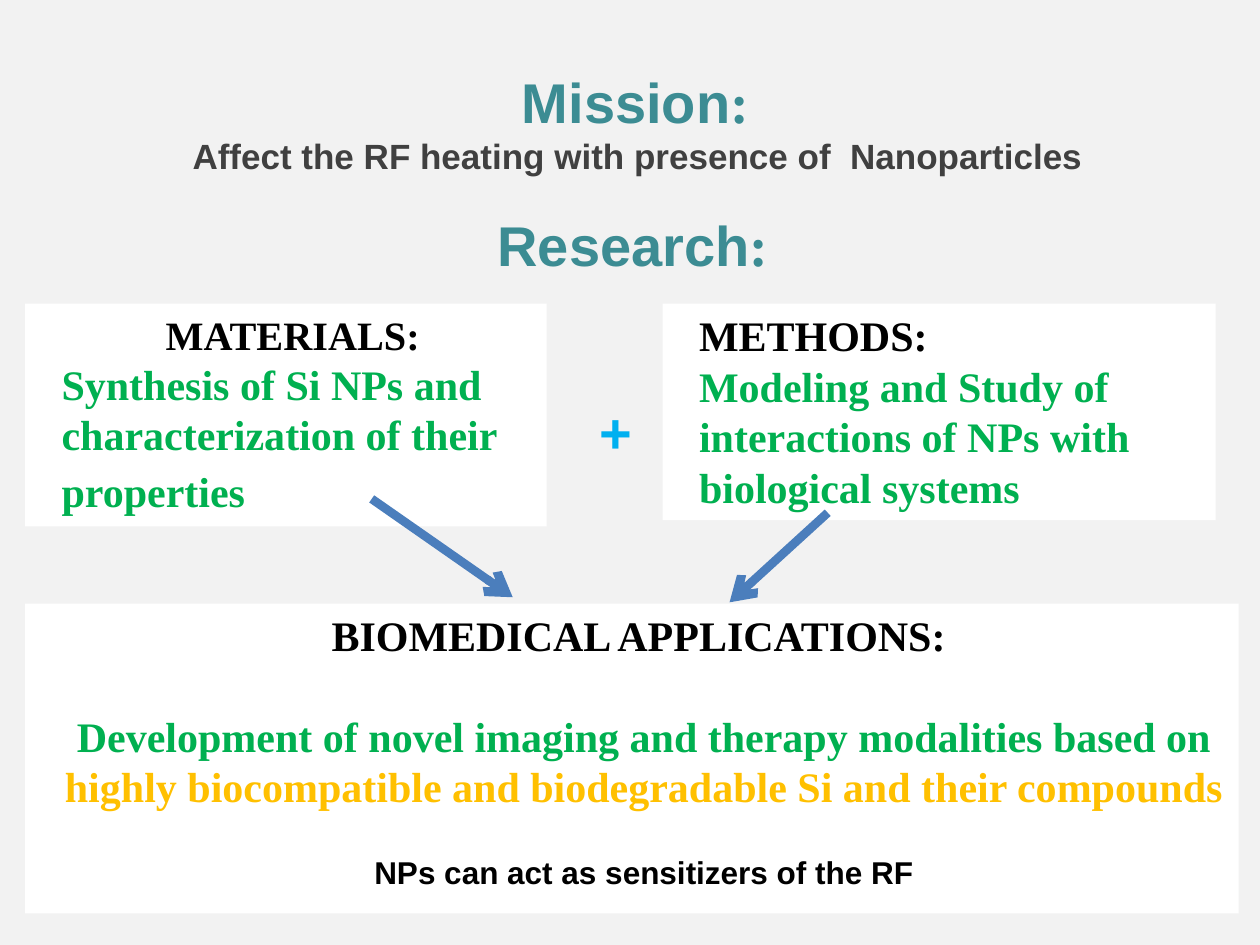
from dataclasses import dataclass

from lxml import etree
from pptx import Presentation
from pptx.dml.color import RGBColor
from pptx.enum.shapes import MSO_CONNECTOR, MSO_SHAPE
from pptx.enum.text import MSO_ANCHOR, PP_ALIGN
from pptx.oxml.ns import qn
from pptx.util import Pt

STRAIGHT = MSO_CONNECTOR.STRAIGHT
RECTANGLE = MSO_SHAPE.RECTANGLE
TOP, MIDDLE = MSO_ANCHOR.TOP, MSO_ANCHOR.MIDDLE
LEFT, CENTER = PP_ALIGN.LEFT, PP_ALIGN.CENTER


@dataclass(frozen=True)
class Theme:
    sans: str = "Arial"
    serif: str = "Times New Roman"
    background: str = "F2F2F2"
    panel: str = "FFFFFF"
    heading: str = "3C8C93"
    subtitle: str = "404040"
    ink: str = "000000"
    green: str = "00B050"
    gold: str = "FFC000"
    plus: str = "00B0F0"
    arrow: str = "4B7EBC"
    heading_size: int = 32
    tail_size: int = 28
    panel_size: int = 24
    materials_size: int = 23
    subtitle_size: int = 20
    note_size: int = 18
    arrow_width: int = 5


THEME = Theme()


def color(value):
    return RGBColor.from_string(value)


def span(text, font, size, ink):
    return text, font, size, ink


def heading(text, colon):
    return [span(text, THEME.sans, THEME.heading_size, THEME.heading),
            span(colon, THEME.serif, THEME.heading_size, THEME.heading)]


def serif(text, ink, size=THEME.panel_size):
    return span(text, THEME.serif, size, ink)


def fill_text(box, paragraphs, anchor=TOP, wrap=True, indent=0):
    frame = box.text_frame
    for name, value in {"word_wrap": wrap, "vertical_anchor": anchor}.items():
        setattr(frame, name, value)
    for index, (spans, para_format) in enumerate(paragraphs):
        para = frame.add_paragraph() if index else frame.paragraphs[0]
        for name, value in para_format.items():
            setattr(para, name, value)
        if indent:
            properties = para._p.get_or_add_pPr()
            properties.set("marL", str(Pt(indent)))
            properties.set("indent", "0")
        for text, font, size, ink in spans:
            run = para.add_run()
            run.text = text
            for name, value in {"name": font, "size": Pt(size), "bold": True}.items():
                setattr(run.font, name, value)
            run.font.color.rgb = color(ink)


def add_label(page, place, paragraphs, **options):
    box = page.shapes.add_textbox(*map(Pt, place))
    fill_text(box, paragraphs, **options)


def add_panel(page, place, paragraphs):
    box = page.shapes.add_shape(RECTANGLE, *map(Pt, place))
    box.shadow.inherit = False
    box.fill.solid()
    box.fill.fore_color.rgb = color(THEME.panel)
    box.line.fill.background()
    fill_text(box, paragraphs, indent=13.7)


def add_arrow(page, start, end):
    arrow = page.shapes.add_connector(STRAIGHT, *map(Pt, start + end))
    arrow.line.color.rgb = color(THEME.arrow)
    arrow.line.width = Pt(THEME.arrow_width)
    etree.SubElement(arrow.line._get_or_add_ln(), qn("a:tailEnd"), type="arrow")
    etree.SubElement(arrow._element.spPr, qn("a:effectLst"))


def main():
    deck = Presentation()
    deck.slide_width, deck.slide_height = Pt(720), Pt(540)
    page = deck.slides.add_slide(deck.slide_layouts[6])
    page.background.fill.solid()
    page.background.fill.fore_color.rgb = color(THEME.background)
    left, center = {"alignment": LEFT}, {"alignment": CENTER}

    add_label(page, (5.8, 0, 722.9, 139.7), [
        (heading("Mission", ": "), center),
        ([span("Affect the RF heating with presence of  Nanoparticles ",
               THEME.sans, THEME.subtitle_size, THEME.subtitle)], center),
    ], anchor=MIDDLE)
    add_panel(page, (14.4, 173.5, 298, 127.4), [
        ([serif("MATERIALS: ", THEME.ink, THEME.materials_size)], center),
        ([serif("Synthesis of Si NPs and characterization of their properties", THEME.green),
          serif(" ", THEME.green, THEME.tail_size)], left),
    ])
    add_panel(page, (378.7, 173.5, 316, 123.8), [
        ([serif("METHODS:", THEME.ink)], left),
        ([serif("Modeling and Study of interactions of NPs with biological systems",
                THEME.green)], left),
    ])
    add_label(page, (335.5, 216, 45.4, 59.8), [
        ([span("+", THEME.sans, THEME.heading_size, THEME.plus)],
         {"line_spacing": 1.2, "space_before": Pt(6.4), "space_after": Pt(12)}),
    ])
    add_arrow(page, (212.4, 285.1), (293, 341.3))
    add_arrow(page, (473, 293), (416.9, 344.2))
    add_panel(page, (14.4, 344.9, 693.4, 177.1), [
        ([serif("BIOMEDICAL APPLICATIONS: ", THEME.ink)], center),
        ([serif("Development of novel imaging and therapy modalities based on ", THEME.green),
          serif("highly biocompatible and biodegradable Si and their compounds", THEME.gold)],
         {"alignment": CENTER, "space_before": Pt(28.8)}),
        ([span("NPs can act as sensitizers of the RF", THEME.sans, THEME.note_size, THEME.ink)],
         {"alignment": CENTER, "space_before": Pt(24)}),
    ])
    add_label(page, (277.2, 116.6, 178.6, 46.1), [(heading("Research", ":"), left)], wrap=False)
    deck.save("out.pptx")


if __name__ == "__main__":
    main()
